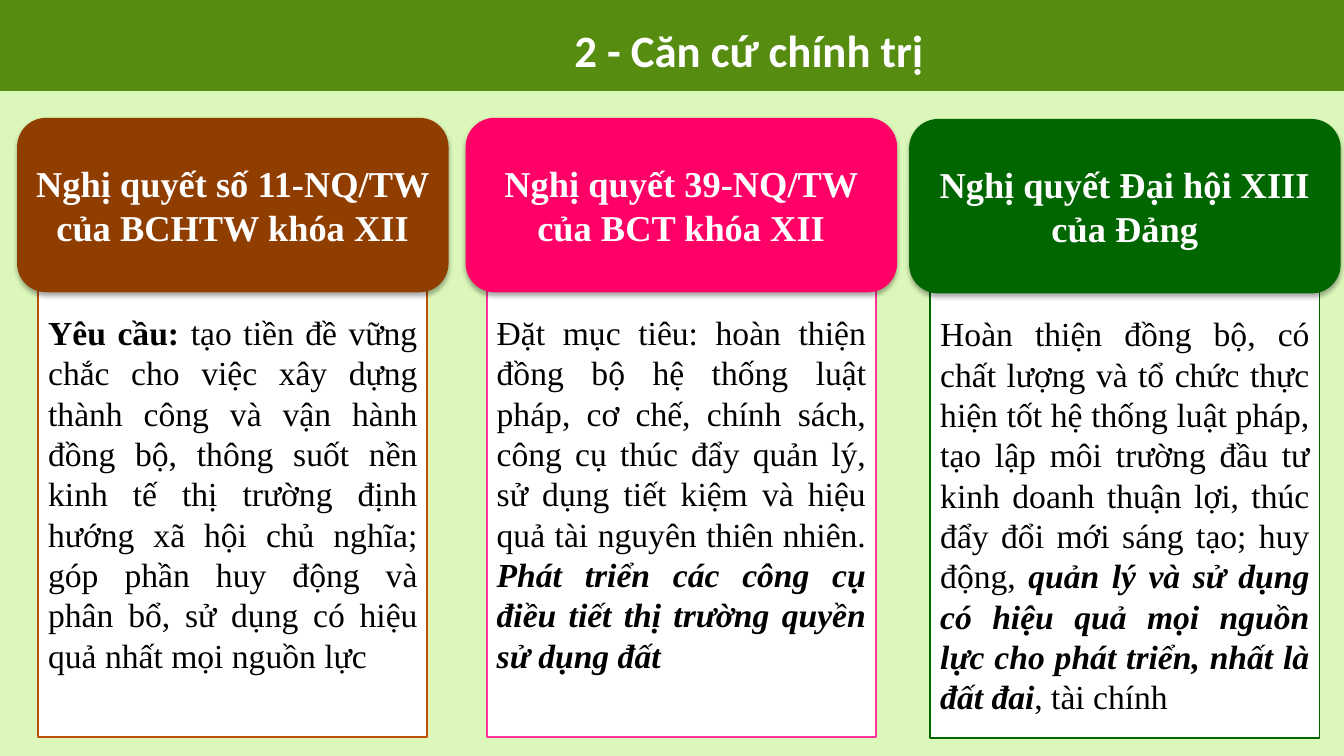
"""Build the slide on political grounds: a title band and three resolution cards."""
from lxml import etree
from pptx import Presentation
from pptx import util as u
from pptx.dml import color
from pptx.enum import shapes, text
from pptx.oxml import ns

Pt = u.Pt
SERIF = "Times New Roman"
CARDS = [
    (12.2, 84.2, "903E00", "BB5203", "Nghị quyết số 11-NQ/TW của BCHTW khóa XII", 3.6, [
        ("Yêu cầu:", True, False),
        (" tạo tiền đề vững chắc cho việc xây dựng thành công và vận hành đồng bộ, "
         "thông suốt nền kinh tế thị trường định hướng xã hội chủ nghĩa; góp phần huy động "
         "và phân bổ, sử dụng có hiệu quả nhất mọi nguồn lực", False, False)]),
    (332.6, 84.2, "FF0066", "FF3399", "Nghị quyết 39-NQ/TW của BCT khóa XII", 3.6, [
        ("Đặt mục tiêu: hoàn thiện đồng bộ hệ thống luật pháp, cơ chế, chính sách, công cụ "
         "thúc đẩy quản lý, sử dụng tiết kiệm và hiệu quả tài nguyên thiên nhiên. ",
         False, False),
        ("Phát triển các công cụ điều tiết thị trường quyền sử dụng đất", True, True)]),
    (649.4, 85, "006600", "006600", "Nghị quyết Đại hội XIII của Đảng", 32.4, [
        ("Hoàn thiện đồng bộ, có chất lượng và tổ chức thực hiện tốt hệ thống luật pháp, "
         "tạo lập môi trường đầu tư kinh doanh thuận lợi, thúc đẩy đổi mới sáng tạo; "
         "huy động, ", False, False),
        ("quản lý và sử dụng có hiệu quả mọi nguồn lực cho phát triển, nhất là đất đai",
         True, True),
        (", tài chính", False, False)]),
]


def rgb(code):
    """Turn a hex string into a colour."""
    return color.RGBColor.from_string(code)


def box(slide, kind, rect, fill, line=None):
    """Add a filled shape without a shadow."""
    shape = slide.shapes.add_shape(kind, *map(Pt, rect))
    shape.shadow.inherit = False
    shape.fill.solid()
    shape.fill.fore_color.rgb = rgb(fill)
    if line:
        shape.line.color.rgb = rgb(line)
        shape.line.width = Pt(1.25)
    else:
        shape.line.fill.background()
    return shape


def shade(shape):
    """Give a shape a soft shadow below it."""
    effects = shape.element.spPr.find(ns.qn("a:effectLst"))
    outer = etree.SubElement(effects, ns.qn("a:outerShdw"), blurRad=str(Pt(3.5)),
                             dist=str(Pt(2.2)), dir="5400000", rotWithShape="0")
    tint = etree.SubElement(outer, ns.qn("a:srgbClr"), val="000000")
    etree.SubElement(tint, ns.qn("a:alpha"), val="32000")


def write(shape, parts, size, hue, align, font=SERIF):
    """Fill a shape with one paragraph of (words, bold, italic) parts."""
    frame = shape.text_frame
    frame.word_wrap = True
    frame.vertical_anchor = text.MSO_ANCHOR.MIDDLE
    para = frame.paragraphs[0]
    para.alignment = align
    for words, bold, slant in parts:
        run = para.add_run()
        run.text = words
        run.font.name = font
        run.font.size = Pt(size)
        run.font.bold = bold
        run.font.italic = slant
        run.font.color.rgb = rgb(hue)


def card(slide, left, top, fill, line, head, inset, parts):
    """Add a body box with a rounded heading over its top edge."""
    kinds = shapes.MSO_SHAPE
    body = box(slide, kinds.RECTANGLE, (left + 15.1, top + 94.4, 278, 347.8), "FFFFFF", line)
    body.text_frame.margin_top = Pt(inset)
    write(body, parts, 24, "000000", text.PP_ALIGN.JUSTIFY)
    cap = box(slide, kinds.ROUNDED_RECTANGLE, (left, top, 308.2, 124.6), fill)
    shade(cap)
    write(cap, [(head, True, False)], 26, "FFFFFF", text.PP_ALIGN.CENTER)


def main():
    """Build and save the slide."""
    deck = Presentation()
    deck.slide_width, deck.slide_height = Pt(960), Pt(540)
    slide = deck.slides.add_slide(deck.slide_layouts[6])
    plain = shapes.MSO_SHAPE.RECTANGLE
    box(slide, plain, (0, 0, 960, 540), "568D11")
    box(slide, plain, (0, 66, 960, 474), "DCF7BA", "DCF7BA")
    title = slide.shapes.add_textbox(*map(Pt, (120, 12.2, 830, 46)))
    write(title, [("2 - Căn cứ chính trị", True, False)], 32, "FFFFFF",
          text.PP_ALIGN.CENTER, "Calibri")
    for item in CARDS:
        card(slide, *item)
    deck.save("out.pptx")


if __name__ == "__main__":
    main()
